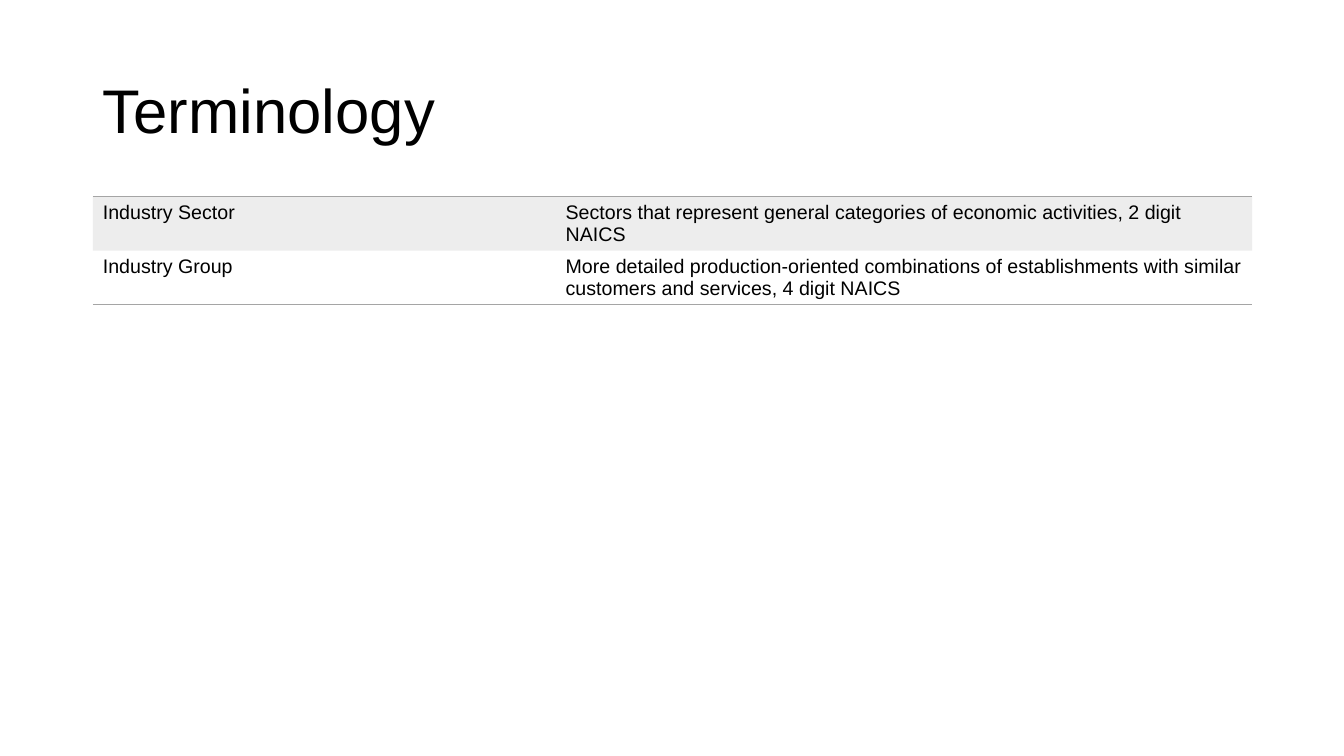
"""Build the Terminology slide: a title above a two-row table of definitions."""
from dataclasses import dataclass

from lxml import etree
from pptx import Presentation
from pptx.dml.color import RGBColor
from pptx.enum.text import MSO_ANCHOR, MSO_AUTO_SIZE, PP_ALIGN
from pptx.oxml import parse_xml
from pptx.oxml.ns import qn
from pptx.util import Inches, Pt

LEFT = PP_ALIGN.LEFT
MIDDLE = MSO_ANCHOR.MIDDLE
NO_AUTOFIT = MSO_AUTO_SIZE.NONE
PLAIN_TABLE_STYLE = "{2D5ABB26-0587-4C30-8999-92F81FD0307C}"


@dataclass(frozen=True)
class Theme:
    font: str = "Arial"
    text: str = "000000"
    accent: str = "A5A5A5"
    band_opacity: int = 20
    title_size: int = 44
    body_size: int = 14
    rule_width: int = 1


theme = Theme()


def write_text(text_frame, text, size=theme.body_size, color=theme.text, line_spacing=1.0):
    paragraph = text_frame.paragraphs[0]
    paragraph.alignment = LEFT
    paragraph.line_spacing = line_spacing
    run = paragraph.add_run()
    run.text = text
    run.font.name = theme.font
    run.font.size = Pt(size)
    run.font.color.rgb = RGBColor.from_string(color)


def add_rule(cell, side):
    line = parse_xml(
        f'<a:{side} xmlns:a="http://schemas.openxmlformats.org/drawingml/2006/main" '
        f'w="{Pt(theme.rule_width)}"><a:solidFill><a:srgbClr val="{theme.accent}"/>'
        f'</a:solidFill></a:{side}>'
    )
    cell._tc.get_or_add_tcPr().insert(0, line)


presentation = Presentation()
presentation.slide_width = Inches(13.33)
presentation.slide_height = Inches(7.5)
slide = presentation.slides.add_slide(presentation.slide_layouts.get_by_name("Title Only"))

title = slide.shapes.title
title.left, title.top = Inches(0.92), Inches(0.4)
title.width, title.height = Inches(11.5), Inches(1.45)
title.text_frame.vertical_anchor = MIDDLE
title.text_frame.auto_size = NO_AUTOFIT
write_text(title.text_frame, "Terminology", size=theme.title_size, line_spacing=0.9)

definitions = [
    ("Industry Sector",
     "Sectors that represent general categories of economic activities, 2 digit NAICS"),
    ("Industry Group",
     "More detailed production-oriented combinations of establishments with "
     "similar customers and services, 4 digit NAICS"),
]
column_widths = [4.59, 6.91]
row_height = 0.41

table_frame = slide.shapes.add_table(
    len(definitions), len(column_widths), Inches(0.92), Inches(1.95),
    Inches(sum(column_widths)), Inches(row_height * len(definitions)))
table = table_frame.table
table.first_row = False
table.horz_banding = False
table._tbl.tblPr.find(qn("a:tableStyleId")).text = PLAIN_TABLE_STYLE
for column, width in zip(table.columns, column_widths):
    column.width = Inches(width)

for row_index, definition in enumerate(definitions):
    for column_index, text in enumerate(definition):
        cell = table.cell(row_index, column_index)
        write_text(cell.text_frame, text)
        if row_index % 2 == 0:
            cell.fill.solid()
            cell.fill.fore_color.rgb = RGBColor.from_string(theme.accent)
            fill_color = cell._tc.tcPr.find(f"{qn('a:solidFill')}/{qn('a:srgbClr')}")
            etree.SubElement(fill_color, qn("a:alpha"), val=str(theme.band_opacity * 1000))
        else:
            cell.fill.background()
        if row_index == 0:
            add_rule(cell, "lnT")
        if row_index == len(definitions) - 1:
            add_rule(cell, "lnB")

presentation.save("out.pptx")
